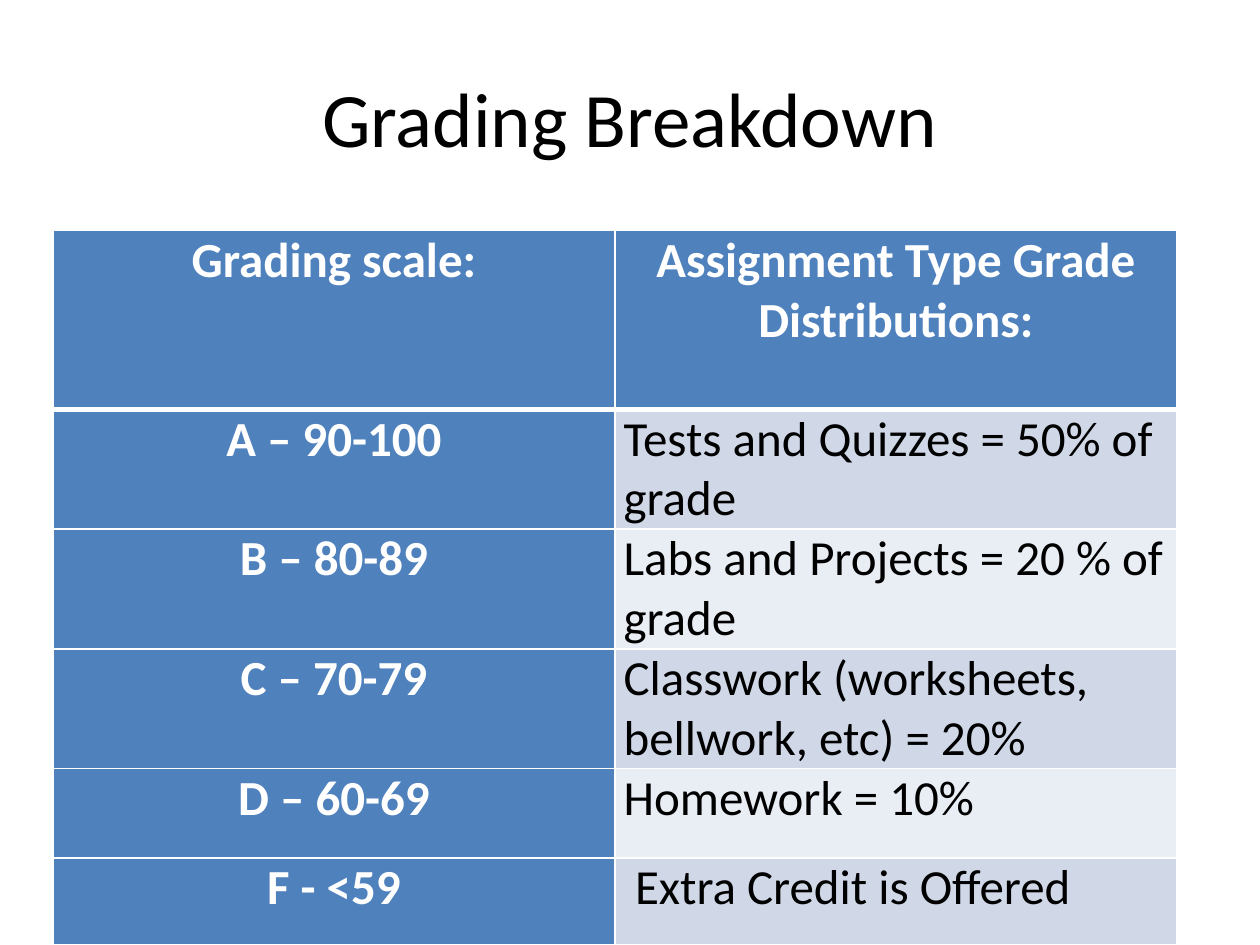
from pptx import Presentation
from pptx.dml.color import RGBColor
from pptx.enum.text import MSO_ANCHOR, PP_ALIGN
from pptx.oxml import parse_xml
from pptx.oxml.ns import nsdecls
from pptx.util import Inches, Pt

LEFT, CENTER = PP_ALIGN.LEFT, PP_ALIGN.CENTER
MIDDLE = MSO_ANCHOR.MIDDLE
FONT = "Calibri"
WHITE, BLACK, BLUE = "FFFFFF", "000000", "4F81BD"
BANDS = ("D0D8E8", "E9EDF4")
PAD = 0.07
INDENT = 0.09

HEAD = ("Grading scale:", "Assignment Type Grade Distributions:")
GRADES = [
    ("A – 90-100", "Tests and Quizzes = 50% of grade"),
    ("B – 80-89", "Labs and Projects = 20 % of grade"),
    ("C – 70-79", "Classwork (worksheets, bellwork, etc) = 20%"),
    ("D – 60-69", "Homework = 10%"),
    ("F - <59", "Extra Credit is Offered"),
]
HEIGHTS = (1.42, 0.95, 0.95, 0.95, 0.71, 0.69)


def paint(code):
    return RGBColor.from_string(code)


class Deck:
    def __init__(self, slide):
        self.slide = slide

    def label(self, frame, text, size, color, bold=False, align=CENTER):
        frame.word_wrap = True
        para = frame.paragraphs[0]
        para.text = text
        para.alignment = align
        font = para.font
        font.name, font.size, font.bold = FONT, Pt(size), bold
        font.color.rgb = paint(color)

    def title(self, text, left, top, width, height):
        box = self.slide.shapes.add_textbox(
            Inches(left), Inches(top), Inches(width), Inches(height))
        box.text_frame.vertical_anchor = MIDDLE
        self.label(box.text_frame, text, 44, BLACK)

    def edge(self, cell, heavy):
        """Draw white cell borders, with wider sides where named in heavy."""
        props = cell._tc.get_or_add_tcPr()
        for spot, side in enumerate("LRTB"):
            width = Pt(3 if side in heavy else 1)
            props.insert(spot, parse_xml(
                f'<a:ln{side} {nsdecls("a")} w="{width}"><a:solidFill>'
                f'<a:srgbClr val="{WHITE}"/></a:solidFill></a:ln{side}>'))

    def cell(self, cell, text, fill, color, bold, align, heavy):
        cell.margin_left = cell.margin_right = Inches(PAD)
        cell.margin_top = cell.margin_bottom = 0
        cell.fill.solid()
        cell.fill.fore_color.rgb = paint(fill)
        self.label(cell.text_frame, text, 28, color, bold, align)
        self.edge(cell, heavy)

    def table(self, rows, left, top, width):
        grid = self.slide.shapes.add_table(
            len(rows), 2, Inches(left), Inches(top),
            Inches(width), Inches(sum(HEIGHTS))).table
        for r, row in enumerate(rows):
            grid.rows[r].height = Inches(HEIGHTS[r])
            heavy = {0: "B", 1: "T"}.get(r, "")
            for c, text in enumerate(row):
                if r == 0 or c == 0:
                    look = BLUE, WHITE, True, CENTER
                else:
                    look = BANDS[(r - 1) % 2], BLACK, False, LEFT
                self.cell(grid.cell(r, c), text, *look, heavy)
        return grid


def main():
    prs = Presentation()
    prs.slide_width, prs.slide_height = Inches(10), Inches(7.5)
    deck = Deck(prs.slides.add_slide(prs.slide_layouts[6]))
    deck.title("Grading Breakdown", 0.5, 0.3, 9, 1.25)
    grid = deck.table([HEAD] + GRADES, 0.42, 1.83, 8.92)
    grid.cell(len(GRADES), 1).margin_left = Inches(PAD + INDENT)
    prs.save("out.pptx")


if __name__ == "__main__":
    main()
